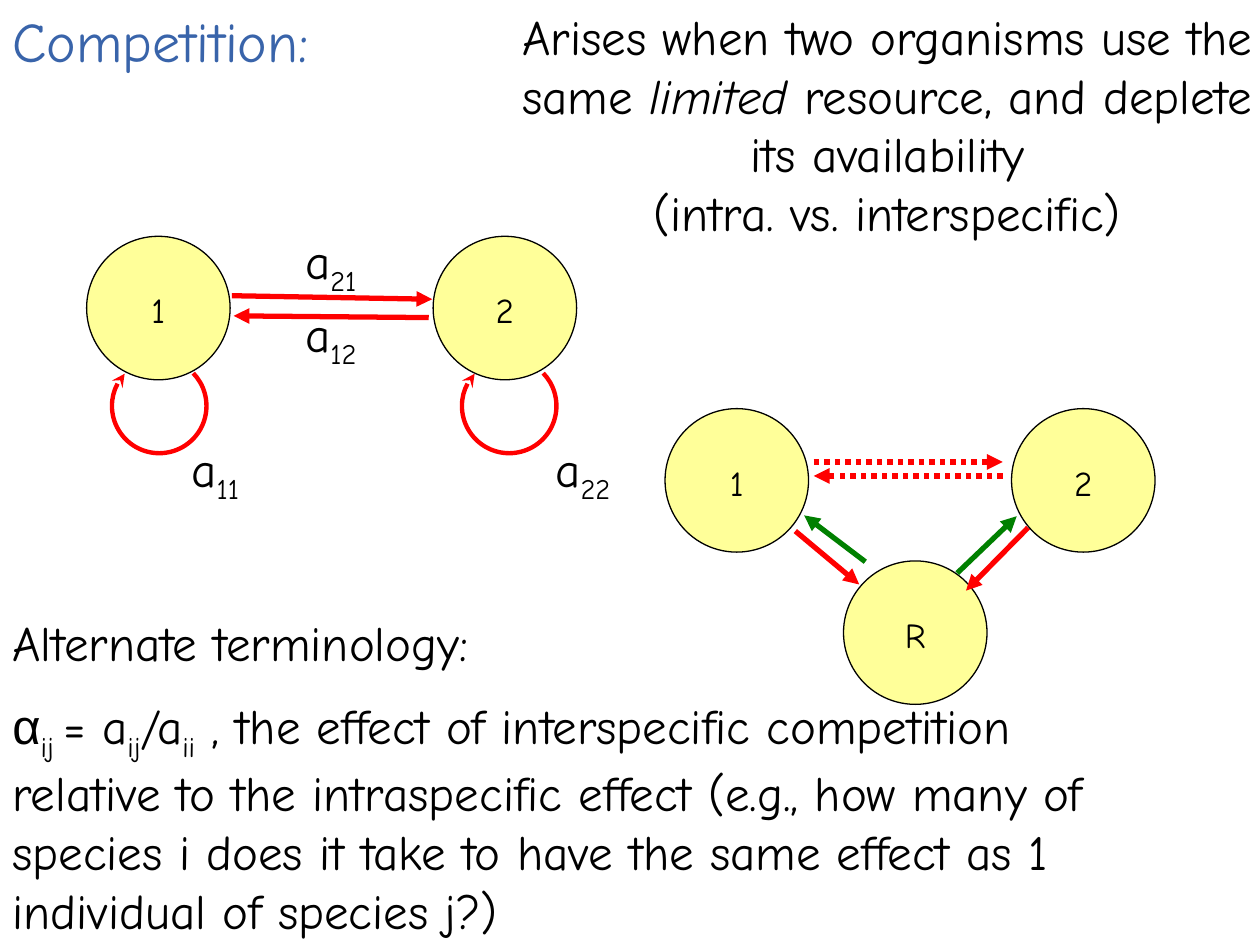
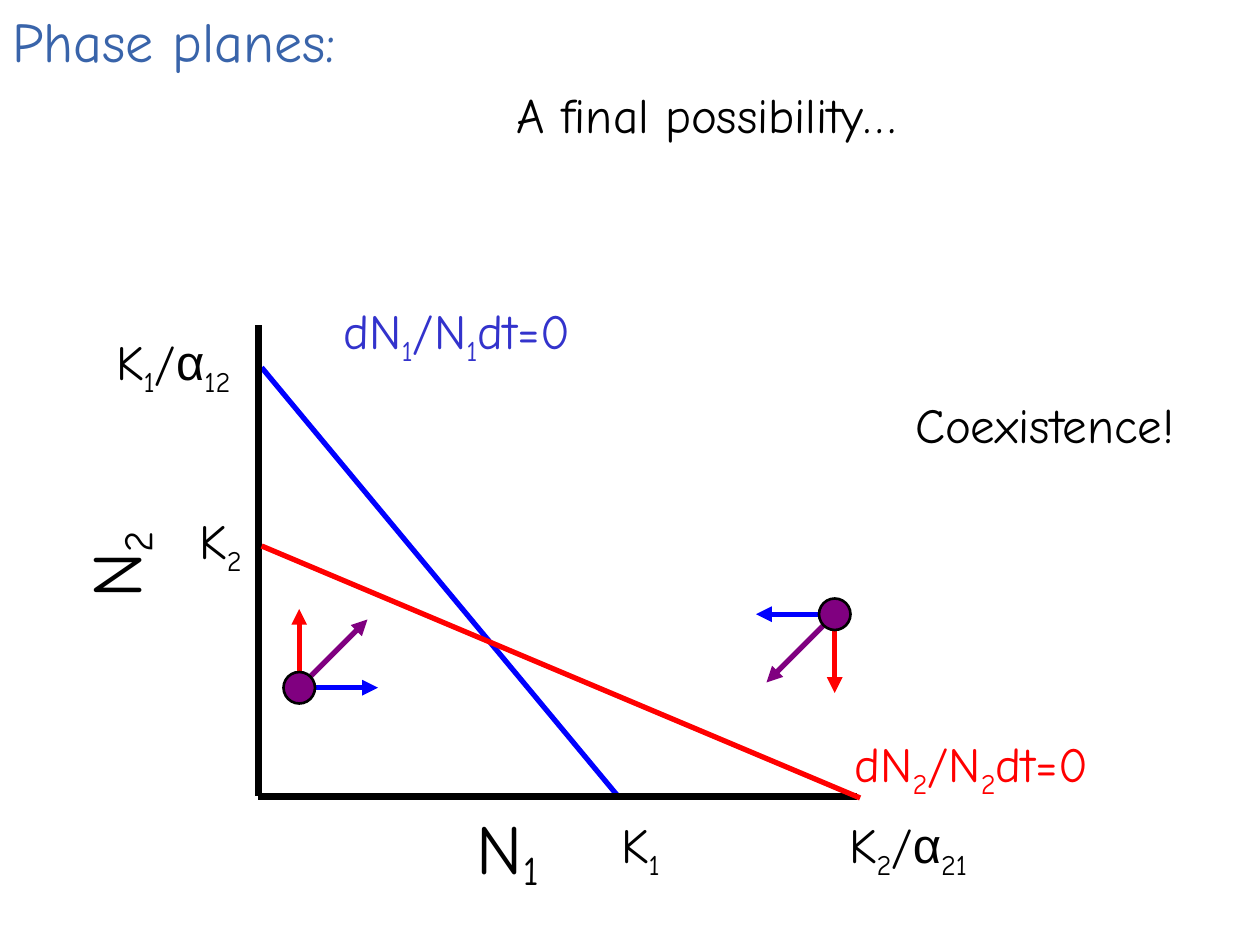
from pptx import Presentation
from pptx.util import Pt
from pptx.dml.color import RGBColor as RGB
from pptx.enum.dml import MSO_LINE
from pptx.enum.shapes import MSO_CONNECTOR as CXN, MSO_SHAPE as SHP
from pptx.enum.text import MSO_ANCHOR as ANCHOR, PP_ALIGN as AL
from pptx.oxml.ns import qn
from lxml.etree import SubElement

COLORS = {
    "title": "3964AA", "text": "000000", "node": "FFFF99", "harm": "FF0000",
    "gain": "008000", "blue": "0000FF", "label": "3333CC", "state": "800080",
}
FONT, GREEK = "Comic Neue", "Arial"
NODE = 82
SUB = "sub"


def rgb(name):
    return RGB.from_string(COLORS[name])


def add_runs(p, runs, size, color, drop=-25):
    for text, style in runs:
        for i, part in enumerate(text.split("\n")):
            if i:
                p.add_line_break()
            r = p.add_run()
            r.text = part
            f = r.font
            f.size, f.color.rgb = Pt(size), rgb(color)
            f.name = GREEK if style == "greek" else FONT
            if style == "italic":
                f.italic = True
            if style == SUB:
                r._r.get_or_add_rPr().set("baseline", str(drop * 1000))


def add_text(s, box, paras, size=28, color="text", align=AL.CENTER, drop=-25, spacing=None):
    sp = s.shapes.add_textbox(*map(Pt, box))
    tf = sp.text_frame
    tf.word_wrap = True
    for i, runs in enumerate(paras):
        p = tf.add_paragraph() if i else tf.paragraphs[0]
        p.alignment = align
        if i:
            p.space_before = Pt(size / 2)
        if spacing:
            p.line_spacing = spacing
        add_runs(p, runs, size, color, drop)
    return sp


def add_line(s, start, end, color, width=3, arrow=True, dash=None):
    c = s.shapes.add_connector(CXN.STRAIGHT, *map(Pt, (*start, *end)))
    c.line.color.rgb, c.line.width = rgb(color), Pt(width)
    if dash:
        c.line.dash_style = dash
    if arrow:
        add_head(c, "triangle")
    SubElement(c._element.spPr, qn("a:effectLst"))


def add_head(sp, kind):
    SubElement(sp.line._get_or_add_ln(), qn("a:tailEnd")).set("type", kind)


def add_circle(s, x, y, size, fill, width):
    sp = s.shapes.add_shape(SHP.OVAL, Pt(x), Pt(y), Pt(size), Pt(size))
    sp.shadow.inherit = False
    sp.fill.solid()
    sp.fill.fore_color.rgb = rgb(fill)
    sp.line.color.rgb, sp.line.width = rgb("text"), Pt(width)
    return sp


def add_node(s, x, y, name):
    tf = add_circle(s, x, y, NODE, "node", 0.75).text_frame
    tf.margin_bottom, tf.margin_top = Pt(0), Pt(2)
    tf.vertical_anchor = ANCHOR.MIDDLE
    p = tf.paragraphs[0]
    p.alignment = AL.CENTER
    add_runs(p, [(name, "")], 20, "text")


def add_self_loop(s, x, y):
    sp = s.shapes.add_shape(SHP.ARC, Pt(x), Pt(y), Pt(54), Pt(54))
    sp.shadow.inherit = False
    sp.adjustments[0], sp.adjustments[1] = 316 * 0.6, 223 * 0.6
    sp.fill.background()
    sp.line.color.rgb, sp.line.width = rgb("harm"), Pt(2.5)
    add_head(sp, "stealth")


def add_title(s, text):
    add_text(s, (0, 0, 234, 45), [[(text, "")]], 32, "title", AL.LEFT)


def direct_competition(s, x, y):
    for i, loop_x in enumerate((14.5, 214.5)):
        add_node(s, x + i * 198, y, str(i + 1))
        add_self_loop(s, x + loop_x, y + 70)
    add_line(s, (x + 83, y + 34), (x + 197.5, y + 36), "harm")
    add_line(s, (x + 195.5, y + 46.5), (x + 84, y + 45.5), "harm")
    for index, dx, dy in (("21", 112.5, -7), ("12", 112.5, 35),
                          ("11", 46.5, 112), ("22", 256.5, 112)):
        add_text(s, (x + dx, y + dy, 54, 41), [[("a", ""), (index, SUB)]])


def resource_competition(s, x, y):
    for name, dx, dy in (("1", 0, 0), ("2", 198, 0), ("R", 102, 87)):
        add_node(s, x + dx, y + dy, name)
    for start, end, color, dash in (
        ((207.5, 68), (172, 104), "harm", None),
        ((74.5, 70), (111, 100.5), "harm", None),
        ((167, 94), (201, 61.5), "gain", None),
        ((114.5, 87.5), (79.5, 61), "gain", None),
        ((193, 38.5), (85, 38.5), "harm", MSO_LINE.ROUND_DOT),
        ((85, 30.5), (193, 30.5), "harm", MSO_LINE.ROUND_DOT),
    ):
        add_line(s, (x + start[0], y + start[1]), (x + end[0], y + end[1]), color, dash=dash)


def competition_slide(prs):
    s = prs.slides.add_slide(prs.slide_layouts[6])
    add_title(s, "Competition:")
    direct_competition(s, 49.5, 135)
    add_text(s, (0, 346.5, 672, 193.5), [
        [("Alternate terminology:", "")],
        [("α", "greek"), ("ij ", SUB), ("= a", ""), ("ij", SUB), ("/a", ""), ("ii", SUB),
         (" , the effect of interspecific competition relative to the intraspecific effect "
          "(e.g., how many of species i does it take to have the same effect as 1 individual "
          "of species j?)", "")],
    ], align=AL.LEFT)
    add_text(s, (282, 0, 450, 142), [[
        ("Arises when two organisms use the same ", ""), ("limited", "italic"),
        (" resource, and deplete its availability\n(intra. vs. interspecific)", ""),
    ]])
    resource_competition(s, 380, 233.5)


def isocline_name(n):
    return [("dN", ""), (n, SUB), ("/N", ""), (n, SUB), ("dt=0", "")]


def capacity(n, alpha=None):
    runs = [("K", ""), (n, SUB)]
    return runs + [("/", ""), ("α", "greek"), (alpha, SUB)] if alpha else runs


def axis_name(s, box, n):
    sp = add_text(s, box, [[("N", ""), (n, SUB)]], 40, align=AL.LEFT, drop=-16, spacing=1.15)
    sp.text_frame.word_wrap = False
    return sp


def phase_plane(s, x, y, w, h):
    base = y + h
    add_line(s, (x + 2, y + 24), (x + 206.5, base + 1), "blue", arrow=False)
    add_line(s, (x, y), (x, base), "text", 4, False)
    add_line(s, (x, base), (x + w, base), "text", 4, False)
    add_line(s, (x + 2, y + 126), (x + w + 2, base + 1), "harm", arrow=False)
    axis_name(s, (x + 118, base - 6.5, 58, 62.5), "1")
    axis_name(s, (x - 118, y + 100.5, 62.5, 62.5), "2").rotation = 270
    for runs, dx, dy, width, color in (
        (capacity("1", "12"), -111.5, 0, 126, "text"),
        (capacity("2"), -51.5, 102, 60, "text"),
        (capacity("1"), 188.5, h + 7, 60, "text"),
        (capacity("2", "21"), 308.5, h + 7, 126, "text"),
        (isocline_name("1"), 14.5, -18, 198, "label"),
        (isocline_name("2"), 308.5, 229.5, 198, "harm"),
    ):
        add_text(s, (x + dx, y + dy, width, 41), [runs], color=color)


def state_point(s, x, y, sign):
    near, far, reach = 6.5 * sign, 39 * sign, 45 * sign
    add_line(s, (x, y - 9 * sign), (x, y - reach), "harm")
    add_line(s, (x + 9 * sign, y), (x + reach, y), "blue")
    add_line(s, (x + near, y - near), (x + far, y - far), "state")
    add_circle(s, x - 9, y - 9, 18, "state", 1.5)


def phase_slide(prs):
    s = prs.slides.add_slide(prs.slide_layouts[6])
    add_title(s, "Phase planes:")
    add_text(s, (288, 45, 414, 41), [[("A final possibility…", "")]], align=AL.LEFT)
    phase_plane(s, 147.5, 186, 342, 269)
    state_point(s, 171, 393, 1)
    state_point(s, 477, 351, -1)
    add_text(s, (474, 222, 246, 41), [[("Coexistence!", "")]])


def main():
    prs = Presentation()
    prs.slide_width, prs.slide_height = Pt(720), Pt(540)
    competition_slide(prs)
    phase_slide(prs)
    prs.save("out.pptx")


if __name__ == "__main__":
    main()
